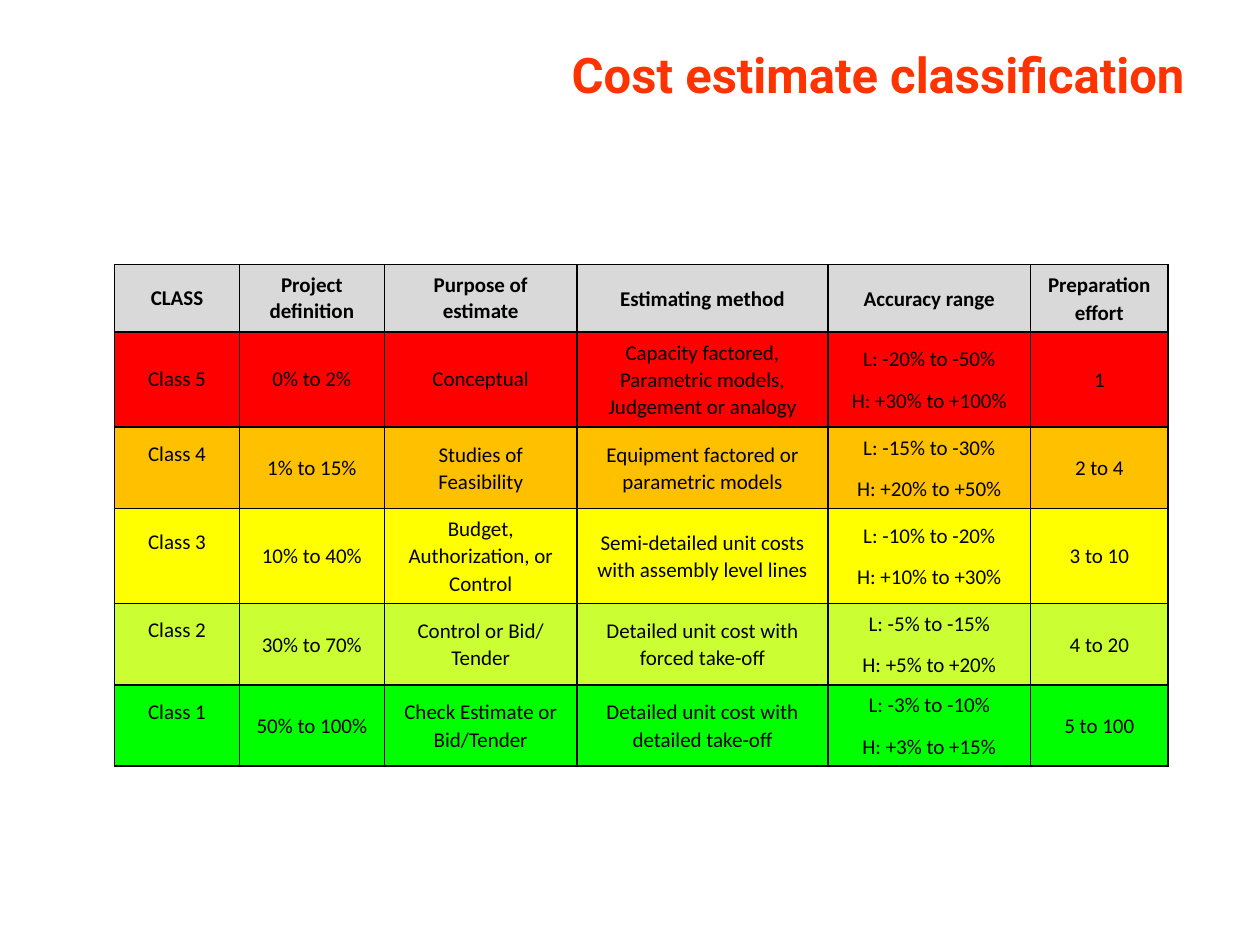
from lxml.etree import SubElement
from pptx import Presentation
from pptx.dml.color import RGBColor
from pptx.enum.text import MSO_ANCHOR, PP_ALIGN
from pptx.oxml.ns import qn
from pptx.util import Pt

BLACK = RGBColor(0, 0, 0)
TITLE_ORANGE = RGBColor(0xFF, 0x33, 0x00)
HEADER_GREY = RGBColor(0xD9, 0xD9, 0xD9)
RED = RGBColor(0xFF, 0, 0)
AMBER = RGBColor(0xFF, 0xC0, 0)
YELLOW = RGBColor(0xFF, 0xFF, 0)
LIME = RGBColor(0xCC, 0xFF, 0x33)
GREEN = RGBColor(0, 0xFF, 0)

TITLE_FONT = {"name": "Roboto", "size": Pt(28), "bold": True}
HEADER_FONT = {"name": "Calibri", "size": Pt(12), "bold": True}
BODY_FONT = {**HEADER_FONT, "bold": False}
TIGHT = {"alignment": PP_ALIGN.CENTER}
LOOSE = {**TIGHT, "line_spacing": 1.07, "space_after": Pt(8)}

COLUMN_WIDTHS = [71.3, 82.8, 110.2, 143.3, 115.9, 78.5]
ROW_HEIGHTS = [38.5, 54.3, 46.5, 54.3, 46.5, 46.5]
ROWS = [
    (HEADER_GREY, ["CLASS", "Project definition", "Purpose of estimate",
                   "Estimating method", "Accuracy range", "Preparation effort"]),
    (RED, ["Class 5", "0% to 2%", "Conceptual",
           "Capacity factored, Parametric models, Judgement or analogy",
           "L: -20% to -50%\nH: +30% to +100%", "1"]),
    (AMBER, ["Class 4", "1% to 15%", "Studies of Feasibility",
             "Equipment factored or parametric models",
             "L: -15% to -30%\nH: +20% to +50%", "2 to 4"]),
    (YELLOW, ["Class 3", "10% to 40%", "Budget, Authorization, or Control",
              "Semi-detailed unit costs with assembly level lines",
              "L: -10% to -20%\nH: +10% to +30%", "3 to 10"]),
    (LIME, ["Class 2", "30% to 70%", "Control or Bid/ Tender",
            "Detailed unit cost with forced take-off",
            "L: -5% to -15%\nH: +5% to +20%", "4 to 20"]),
    (GREEN, ["Class 1", "50% to 100%", "Check Estimate or Bid/Tender",
             "Detailed unit cost with detailed take-off",
             "L: -3% to -10%\nH: +3% to +15%", "5 to 100"]),
]


def apply_format(target, values):
    for name, value in values.items():
        setattr(target, name, value)


def format_text(text_frame, paragraph_format, font_format, color):
    for paragraph in text_frame.paragraphs:
        apply_format(paragraph, paragraph_format)
        apply_format(paragraph.font, font_format)
        paragraph.font.color.rgb = color


def add_borders(cell, color, width):
    properties = cell._tc.get_or_add_tcPr()
    for side in ("lnL", "lnR", "lnT", "lnB"):
        line = SubElement(properties, qn(f"a:{side}"), w=str(width))
        fill = SubElement(line, qn("a:solidFill"))
        SubElement(fill, qn("a:srgbClr"), val=str(color))


def place_title(slide, left, top, width, height):
    title = slide.shapes.title
    apply_format(title, {"left": left, "top": top, "width": width, "height": height})
    title.text_frame.text = "Cost estimate classification"
    title.text_frame.vertical_anchor = MSO_ANCHOR.TOP
    format_text(title.text_frame, {"alignment": PP_ALIGN.RIGHT}, TITLE_FONT, TITLE_ORANGE)


def place_class_table(slide, left, top, width, height):
    table = slide.shapes.add_table(
        len(ROWS), len(COLUMN_WIDTHS), left, top, width, height).table
    for column, column_width in zip(table.columns, COLUMN_WIDTHS):
        column.width = Pt(column_width)
    for row, row_height in zip(table.rows, ROW_HEIGHTS):
        row.height = Pt(row_height)
    for row_index, (color, texts) in enumerate(ROWS):
        font_format = BODY_FONT if row_index else HEADER_FONT
        for column_index, text in enumerate(texts):
            cell = table.cell(row_index, column_index)
            cell.text = text
            cell.vertical_anchor = MSO_ANCHOR.MIDDLE
            loose = column_index > 2 or (row_index > 1 and column_index > 0)
            format_text(cell.text_frame, LOOSE if loose else TIGHT, font_format, BLACK)
            if row_index > 1 and column_index == 0:
                cell.margin_bottom = Pt(19)
            add_borders(cell, BLACK, Pt(1))
            cell.fill.solid()
            cell.fill.fore_color.rgb = color


def main():
    presentation = Presentation()
    presentation.slide_width, presentation.slide_height = Pt(720), Pt(540)
    slide = presentation.slides.add_slide(presentation.slide_layouts[5])
    place_title(slide, Pt(36), Pt(21.6), Pt(648), Pt(90))
    place_class_table(slide, Pt(65.5), Pt(151.2),
                      Pt(sum(COLUMN_WIDTHS)), Pt(sum(ROW_HEIGHTS)))
    presentation.save("out.pptx")


if __name__ == "__main__":
    main()
